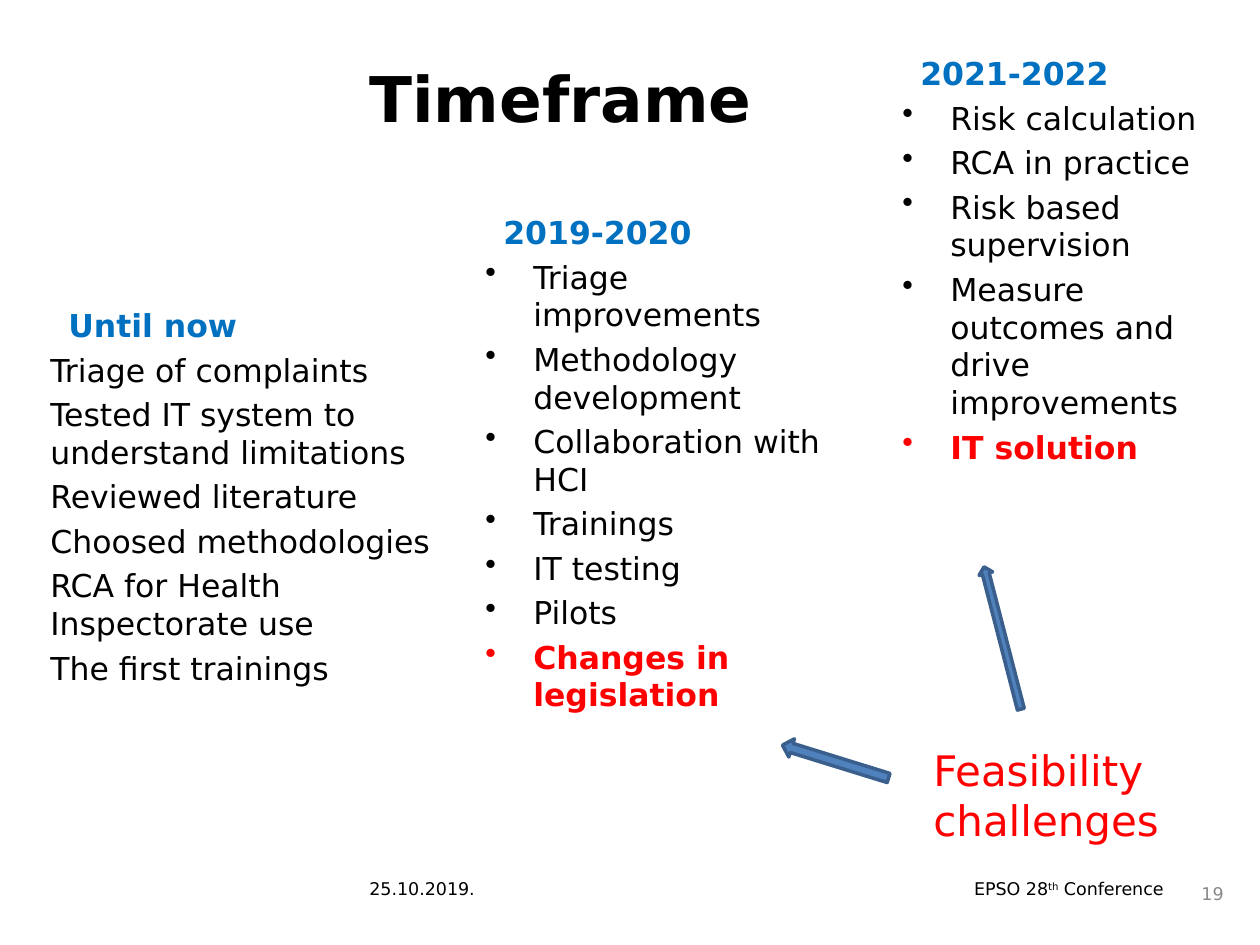
"""Build the Timeframe slide with three staggered periods and two arrows."""
from dataclasses import dataclass

import pptx
import pptx.dml.color
import pptx.enum.shapes
import pptx.enum.text
import pptx.oxml.ns
import pptx.util
from lxml import etree

EMU_PER_PX = 914400 / 126
FONT = "DejaVu Sans"
BLACK, BLUE, RED, GREY = "000000", "0070C0", "FF0000", "898989"
HEADING_INDENT, BULLET_INDENT = 18, 48
ITEM_GAP = 3.8
ALIGN = pptx.enum.text.PP_ALIGN
ANCHOR = pptx.enum.text.MSO_ANCHOR


@dataclass(frozen=True)
class Box:
    left: int
    top: int
    width: int
    height: int


@dataclass(frozen=True)
class Period:
    box: Box
    heading: str
    items: tuple[str, ...]
    challenge: str = ""
    bulleted: bool = True


@dataclass(frozen=True)
class Arrow:
    box: Box
    rotation: float


PERIODS = (
    Period(Box(38, 300, 427, 609), "Until now",
           ("Triage of complaints", "Tested IT system to understand limitations",
            "Reviewed literature", "Choosed methodologies",
            "RCA for Health Inspectorate use", "The first trainings"),
           bulleted=False),
    Period(Box(473, 207, 365, 607), "2019-2020",
           ("Triage improvements", "Methodology development",
            "Collaboration with HCI", "Trainings", "IT testing", "Pilots"),
           challenge="Changes in legislation"),
    Period(Box(890, 48, 325, 591), "2021-2022",
           ("Risk calculation", "RCA in practice", "Risk based supervision",
            "Measure outcomes and drive improvements"),
           challenge="IT solution"),
)
ARROWS = (
    Arrow(Box(780, 752, 111, 19), 197.2),
    Arrow(Box(929, 631, 147, 14), 255.5),
)


def px(length: int) -> int:
    """Turn pixels into EMU."""
    return round(length * EMU_PER_PX)


def color(value: str) -> pptx.dml.color.RGBColor:
    """Turn a hex string into a colour."""
    return pptx.dml.color.RGBColor.from_string(value)


def place(box: Box) -> tuple[int, ...]:
    """Give left, top, width and height in EMU."""
    return tuple(px(n) for n in (box.left, box.top, box.width, box.height))


def add_frame(slide, box: Box, wrap: bool = True, anchor=ANCHOR.TOP):
    """Add a text box and return its text frame."""
    frame = slide.shapes.add_textbox(*place(box)).text_frame
    frame.word_wrap = wrap
    frame.vertical_anchor = anchor
    return frame


def write(frame, text: str, *, size: float, fill: str = BLACK, bold: bool = False,
          align=ALIGN.LEFT, indent: int = 0, bullet: bool = False,
          gap: float = 0, superscript: bool = False, same_line: bool = False) -> None:
    """Write text in a new paragraph, or on the last one when same_line is set."""
    paragraph = frame.paragraphs[-1]
    if not same_line:
        if paragraph.runs:
            paragraph = frame.add_paragraph()
            paragraph.space_before = pptx.util.Pt(gap)
        paragraph.alignment = align
        properties = paragraph._p.get_or_add_pPr()
        properties.set("marL", str(px(indent)))
        properties.set("indent", str(-px(indent) if bullet else 0))
        if bullet:
            mark = etree.SubElement(properties, pptx.oxml.ns.qn("a:buChar"))
            mark.set("char", "•")
    run = paragraph.add_run()
    run.text = text
    run.font.name = FONT
    run.font.size = pptx.util.Pt(size)
    run.font.bold = bold
    run.font.color.rgb = color(fill)
    if superscript:
        run.font._element.set("baseline", "30000")


def draw_period(slide, period: Period) -> None:
    """Draw a heading, its items and the challenge in red."""
    frame = add_frame(slide, period.box)
    write(frame, period.heading, size=18, fill=BLUE, bold=True, indent=HEADING_INDENT)
    layout = dict(size=18, gap=ITEM_GAP, bullet=period.bulleted,
                  indent=BULLET_INDENT if period.bulleted else 0)
    for item in period.items:
        write(frame, item, **layout)
    if period.challenge:
        write(frame, period.challenge, fill=RED, bold=True, **layout)


def draw_arrow(slide, arrow: Arrow) -> None:
    """Draw a rotated block arrow."""
    shape = slide.shapes.add_shape(
        pptx.enum.shapes.MSO_SHAPE.RIGHT_ARROW, *place(arrow.box))
    shape.rotation = arrow.rotation
    shape.shadow.inherit = False
    shape.fill.solid()
    shape.fill.fore_color.rgb = color("4F81BD")
    shape.line.color.rgb = color("3A5F8C")
    shape.line.width = pptx.util.Pt(2)


def draw_footer(slide) -> None:
    """Draw the date, the conference name and the page number."""
    write(add_frame(slide, Box(357, 872, 273, 42)), "25.10.2019.", size=10)
    conference = add_frame(slide, Box(672, 872, 504, 42))
    write(conference, "EPSO 28", size=10, align=ALIGN.RIGHT)
    write(conference, "th", size=10, superscript=True, same_line=True)
    write(conference, " Conference", size=10, same_line=True)
    page = add_frame(slide, Box(1176, 872, 60, 42), anchor=ANCHOR.MIDDLE)
    write(page, "19", size=10, fill=GREY, align=ALIGN.RIGHT)


def main() -> None:
    """Build and save the slide."""
    deck = pptx.Presentation()
    deck.slide_width, deck.slide_height = px(1260), px(945)
    slide = deck.slides.add_slide(deck.slide_layouts[6])
    draw_footer(slide)
    write(add_frame(slide, Box(357, 53, 840, 142)), "Timeframe", size=36, bold=True)
    for period in PERIODS:
        draw_period(slide, period)
    challenges = add_frame(slide, Box(921, 738, 252, 115), wrap=False)
    challenges.auto_size = pptx.enum.text.MSO_AUTO_SIZE.SHAPE_TO_FIT_TEXT
    for line in ("Feasibility", "challenges"):
        write(challenges, line, size=24, fill=RED)
    for arrow in ARROWS:
        draw_arrow(slide, arrow)
    deck.save("out.pptx")


if __name__ == "__main__":
    main()
